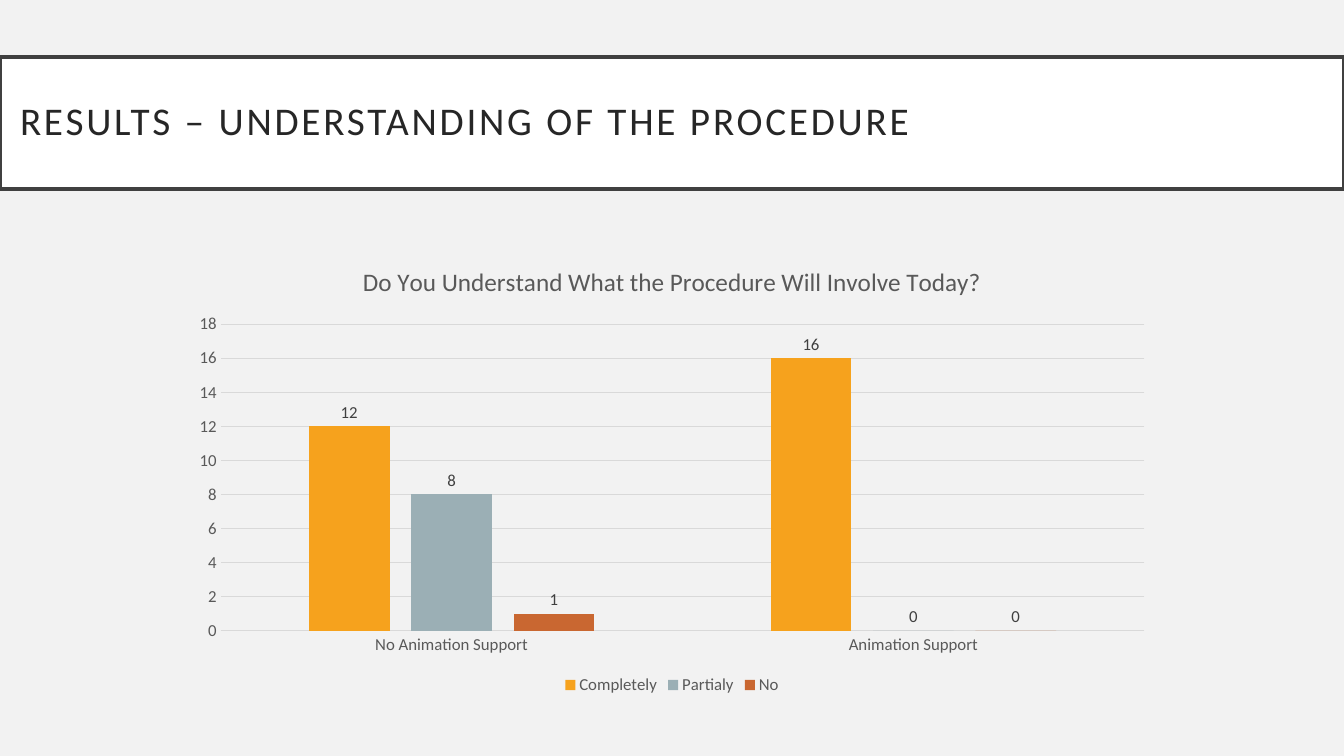
from pptx import Presentation
from pptx.chart.data import CategoryChartData
from pptx.dml.color import RGBColor
from pptx.enum.chart import XL_CHART_TYPE, XL_LABEL_POSITION, XL_LEGEND_POSITION, XL_TICK_MARK
from pptx.enum.shapes import MSO_SHAPE
from pptx.enum.text import MSO_ANCHOR, PP_ALIGN
from pptx.util import Pt

COLORS = {
    "back": "F2F2F2", "band": "FFFFFF", "edge": "404040", "head": "262626",
    "text": "595959", "label": "404040", "grid": "D9D9D9",
}
FONT = "Calibri"
GROUPS = ["No Animation Support", "Animation Support"]
SERIES = [
    ("Completely", (12, 16), "F6A21D"),
    ("Partialy", (8, 0), "9BAFB5"),
    ("No", (1, 0), "C96731"),
]


def px(count):
    return round(count * 914400 / 100.8)


def paint(fill, color):
    fill.solid()
    fill.fore_color.rgb = RGBColor.from_string(color)


def style(font, size, color):
    font.name = FONT
    font.size = Pt(size)
    font.bold = False
    font.color.rgb = RGBColor.from_string(color)


def rule(line, color, width):
    paint(line.fill, color)
    line.width = Pt(width)


def add_band(slide, box, text):
    band = slide.shapes.add_shape(MSO_SHAPE.RECTANGLE, *map(px, box))
    band.shadow.inherit = False
    paint(band.fill, COLORS["band"])
    rule(band.line, COLORS["edge"], 2.5)
    frame = band.text_frame
    frame.word_wrap = True
    frame.vertical_anchor = MSO_ANCHOR.MIDDLE
    frame.margin_left = frame.margin_right = px(20)
    frame.margin_top = frame.margin_bottom = px(20)
    para = frame.paragraphs[0]
    para.alignment = PP_ALIGN.LEFT
    para.line_spacing = 0.9
    style(para.font, 28, COLORS["head"])
    run = para.add_run()
    run.text = text
    run.font._element.set("spc", "200")


def style_axes(chart):
    for axis in (chart.category_axis, chart.value_axis):
        axis.major_tick_mark = axis.minor_tick_mark = XL_TICK_MARK.NONE
        style(axis.tick_labels.font, 12, COLORS["text"])
    rule(chart.category_axis.format.line, COLORS["grid"], 0.75)
    value = chart.value_axis
    value.minimum_scale, value.maximum_scale, value.major_unit = 0, 18, 2
    value.format.line.fill.background()
    rule(value.major_gridlines.format.line, COLORS["grid"], 0.75)


def add_bars(slide, box, title):
    data = CategoryChartData()
    data.categories = GROUPS
    for name, values, _ in SERIES:
        data.add_series(name, values)
    chart = slide.shapes.add_chart(
        XL_CHART_TYPE.COLUMN_CLUSTERED, *map(px, box), data).chart
    chart.font.name = FONT
    chart.font.size = Pt(10)
    chart.has_title = True
    chart.chart_title.include_in_layout = False
    para = chart.chart_title.text_frame.paragraphs[0]
    para.text = title
    style(para.font, 18, COLORS["text"])
    chart.has_legend = True
    chart.legend.position = XL_LEGEND_POSITION.BOTTOM
    chart.legend.include_in_layout = False
    style(chart.legend.font, 12, COLORS["text"])
    style_axes(chart)
    plot = chart.plots[0]
    plot.gap_width, plot.overlap = 219, -27
    plot.vary_by_categories = False
    for bars, (_, _, color) in zip(plot.series, SERIES):
        paint(bars.format.fill, color)
        bars.invert_if_negative = False
        labels = bars.data_labels
        labels.show_value = True
        labels.position = XL_LABEL_POSITION.OUTSIDE_END
        style(labels.font, 12, COLORS["label"])


def main():
    deck = Presentation()
    deck.slide_width, deck.slide_height = px(1344), px(756)
    slide = deck.slides.add_slide(deck.slide_layouts[6])
    paint(slide.background.fill, COLORS["back"])
    add_band(slide, (0, 57, 1344, 132), "RESULTS – UNDERSTANDING OF THE PROCEDURE")
    add_bars(slide, (180, 245, 984, 454),
             "Do You Understand What the Procedure Will Involve Today?")
    deck.save("out.pptx")


if __name__ == "__main__":
    main()
